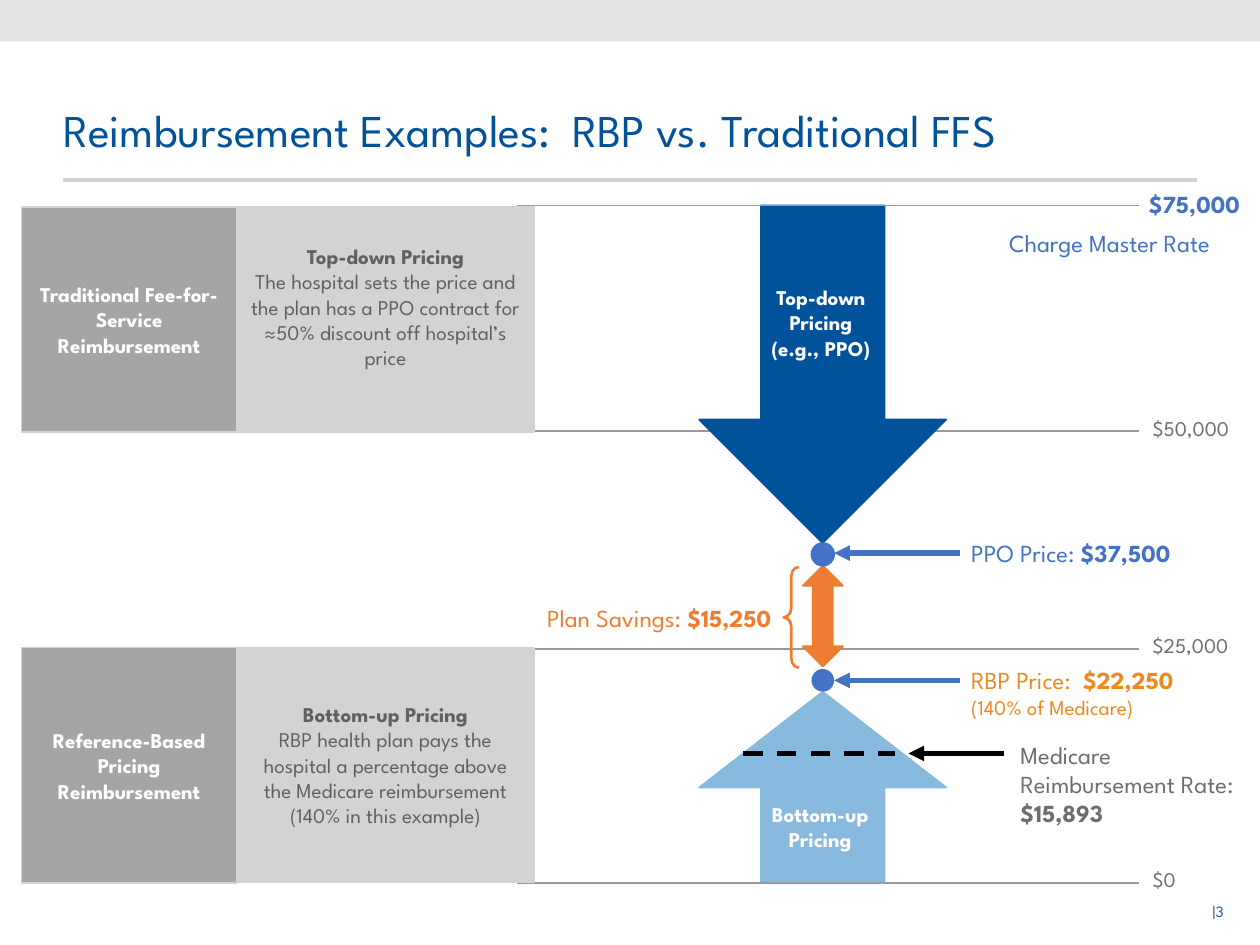
from lxml.etree import SubElement
from pptx import Presentation
from pptx.dml.color import RGBColor
from pptx.enum.dml import MSO_LINE
from pptx.enum.shapes import MSO_CONNECTOR, MSO_SHAPE
from pptx.enum.text import MSO_ANCHOR, MSO_AUTO_SIZE, PP_ALIGN
from pptx.oxml.ns import qn
from pptx.util import Inches, Pt

FONT = "League Spartan"
NAVY = RGBColor(0x00, 0x52, 0x9B)
PAGE_BLUE = RGBColor(0x24, 0x53, 0x97)
BLUE = RGBColor(0x44, 0x72, 0xC4)
LIGHT_BLUE = RGBColor(0x88, 0xBA, 0xDD)
ORANGE = RGBColor(0xED, 0x7D, 0x31)
AMBER = RGBColor(0xEE, 0x8A, 0x1D)
BAND_GRAY = RGBColor(0xC5, 0xC5, 0xC5)
HEADING_GRAY = RGBColor(0xA5, 0xA5, 0xA5)
PALE_GRAY = RGBColor(0xD1, 0xD3, 0xD4)
RULE_GRAY = RGBColor(0x99, 0x99, 0x99)
TEXT_GRAY = RGBColor(0x6D, 0x6E, 0x71)
BODY_GRAY = RGBColor(0x61, 0x61, 0x61)
BLACK = RGBColor(0, 0, 0)
WHITE = RGBColor(0xFF, 0xFF, 0xFF)


class SlideBuilder:
    """Holds the font and the current slide and adds styled elements to it."""

    def __init__(self, slide, font=FONT):
        self.slide = slide
        self.font = font

    def set_text(self, frame, paragraphs, size, color, align=PP_ALIGN.LEFT):
        frame.word_wrap = True
        for index, runs in enumerate(paragraphs):
            paragraph = frame.add_paragraph() if index else frame.paragraphs[0]
            paragraph.alignment = align
            paragraph.font.name = self.font
            paragraph.font.size = Pt(size)
            paragraph.font.color.rgb = color
            for text, bold in runs:
                run = paragraph.add_run()
                run.text = text
                run.font.bold = bold
        return frame

    def title(self, text, left, top, width, height):
        title = self.slide.shapes.title
        title.left, title.top = Inches(left), Inches(top)
        title.width, title.height = Inches(width), Inches(height)
        frame = self.set_text(title.text_frame, [[(text, False)]], 26, NAVY)
        frame.auto_size = MSO_AUTO_SIZE.NONE
        frame.vertical_anchor = MSO_ANCHOR.BOTTOM
        frame.margin_left = frame.margin_right = 0
        frame.paragraphs[0].line_spacing = 0.9

    def label(self, paragraphs, left, top, width, height, color, size=14, align=PP_ALIGN.LEFT):
        box = self.slide.shapes.add_textbox(Inches(left), Inches(top), Inches(width), Inches(height))
        return self.set_text(box.text_frame, paragraphs, size, color, align)

    def shape(self, kind, left, top, width, height, fill=None, line=None, weight=1):
        shape = self.slide.shapes.add_shape(kind, Inches(left), Inches(top), Inches(width), Inches(height))
        shape.shadow.inherit = False
        if fill is None:
            shape.fill.background()
        else:
            shape.fill.solid()
            shape.fill.fore_color.rgb = fill
        if line is None:
            shape.line.fill.background()
        else:
            shape.line.color.rgb = line
            shape.line.width = Pt(weight)
        return shape

    def panel(self, paragraphs, left, top, width, height, fill, color):
        panel = self.shape(MSO_SHAPE.RECTANGLE, left, top, width, height, fill, PALE_GRAY)
        frame = self.set_text(panel.text_frame, paragraphs, 12, color, PP_ALIGN.CENTER)
        frame.vertical_anchor = MSO_ANCHOR.MIDDLE
        return frame

    def line(self, start, end, y, color, weight, arrow=False, dashed=False):
        line = self.slide.shapes.add_connector(
            MSO_CONNECTOR.STRAIGHT, Inches(start), Inches(y), Inches(end), Inches(y))
        line.line.color.rgb = color
        line.line.width = Pt(weight)
        if dashed:
            line.line.dash_style = MSO_LINE.DASH
        properties = line.element.spPr
        if arrow:
            SubElement(properties.find(qn("a:ln")), qn("a:tailEnd"), type="triangle")
        SubElement(properties, qn("a:effectLst"))

    def band(self, width, height, color, opacity):
        band = self.shape(MSO_SHAPE.RECTANGLE, 0, 0, width, height, color)
        color_element = band.element.spPr.find(qn("a:solidFill"))[0]
        SubElement(color_element, qn("a:alpha"), val=str(opacity * 1000))


def main():
    presentation = Presentation()
    presentation.slide_width, presentation.slide_height = Inches(10), Inches(7.5)
    slide = presentation.slides.add_slide(presentation.slide_layouts[5])
    builder = SlideBuilder(slide)

    builder.band(10, 0.33, BAND_GRAY, 47)
    builder.line(0.5, 9.5, 1.43, PALE_GRAY, 2.25)
    builder.title("Reimbursement Examples:  RBP vs. Traditional FFS", 0.5, 0.45, 9, 0.85)
    builder.label([[("|3", False)]], 9.22, 7.11, 0.59, 0.31, PAGE_BLUE, 9, PP_ALIGN.RIGHT)

    builder.line(4.1, 9.04, 3.42, RULE_GRAY, 1)
    builder.shape(MSO_SHAPE.UP_ARROW, 5.55, 5.49, 1.96, 1.52, LIGHT_BLUE, LIGHT_BLUE)
    builder.shape(MSO_SHAPE.DOWN_ARROW, 5.55, 1.63, 1.96, 2.68, NAVY, NAVY)
    for y in (1.63, 5.15, 7.01):
        builder.line(4.1, 9.04, y, RULE_GRAY, 1)

    for amount, top in (("$50,000", 3.25), ("$25,000", 4.97), ("$0", 6.83)):
        builder.label([[(amount, False)]], 9.05, top, 0.98, 0.3, TEXT_GRAY, 12)
    builder.label([[("$75,000", True)]], 9.02, 1.45, 0.98, 0.34, BLUE)
    builder.label([[("Charge Master Rate", False)]], 7.91, 1.76, 2.51, 0.34, BLUE)

    builder.label([[("PPO Price: ", False), ("$37,500", True)]], 7.61, 4.22, 2.12, 0.34, BLUE)
    rbp_price = builder.label(
        [[("RBP Price:  ", False), ("$22,250", True)], [("(140% of Medicare)", False)]],
        7.61, 5.23, 2.21, 0.54, AMBER)
    rbp_price.paragraphs[1].font.size = Pt(12)
    builder.label([[("Plan Savings: ", False), ("$15,250", True)]],
                  4.02, 4.74, 2.2, 0.34, ORANGE, align=PP_ALIGN.RIGHT)
    builder.label([[("Medicare Reimbursement Rate: ", False), ("$15,893", True)]],
                  8, 5.82, 2, 0.81, TEXT_GRAY)

    builder.line(5.9, 7.1, 5.98, BLACK, 2.75, dashed=True)
    builder.line(7.97, 7.21, 5.98, BLACK, 3, arrow=True)
    for y in (4.39, 5.4):
        builder.line(7.62, 6.62, y, BLUE, 3, arrow=True)

    builder.label([[("Top-down Pricing (e.g., PPO)", True)]],
                  5.97, 2.21, 1.09, 0.71, WHITE, 12, PP_ALIGN.CENTER)
    builder.label([[("Bottom-up Pricing", True)]],
                  5.96, 6.31, 1.1, 0.5, WHITE, 12, PP_ALIGN.CENTER)

    builder.shape(MSO_SHAPE.UP_DOWN_ARROW, 6.37, 4.49, 0.32, 0.8, ORANGE, ORANGE)
    brace = builder.shape(MSO_SHAPE.LEFT_BRACE, 6.22, 4.5, 0.12, 0.8, line=ORANGE, weight=1.5)
    brace.adjustments[0] = 0.62
    for top, outline in ((4.31, BLUE), (5.31, None)):
        builder.shape(MSO_SHAPE.OVAL, 6.44, top, 0.18, 0.18, BLUE, outline)

    top_down = builder.panel(
        [[("Top-down Pricing", True)],
         [("The hospital sets the price and the plan has a PPO contract for "
           "≈50% discount off hospital’s price", False)]],
        1.88, 1.64, 2.36, 1.79, PALE_GRAY, BODY_GRAY)
    top_down.margin_bottom = Inches(0.25)
    builder.panel(
        [[("Bottom-up Pricing", True)],
         [("RBP health plan pays the hospital a percentage above the Medicare reimbursement", False)],
         [("(140% in this example)", False)]],
        1.88, 5.14, 2.36, 1.86, PALE_GRAY, BODY_GRAY)
    builder.panel([[("Traditional Fee-for-Service Reimbursement", True)]],
                  0.17, 1.64, 1.71, 1.79, HEADING_GRAY, WHITE)
    builder.panel([[("Reference-Based Pricing Reimbursement", True)]],
                  0.17, 5.14, 1.71, 1.87, HEADING_GRAY, WHITE)

    presentation.save("out.pptx")


if __name__ == "__main__":
    main()
